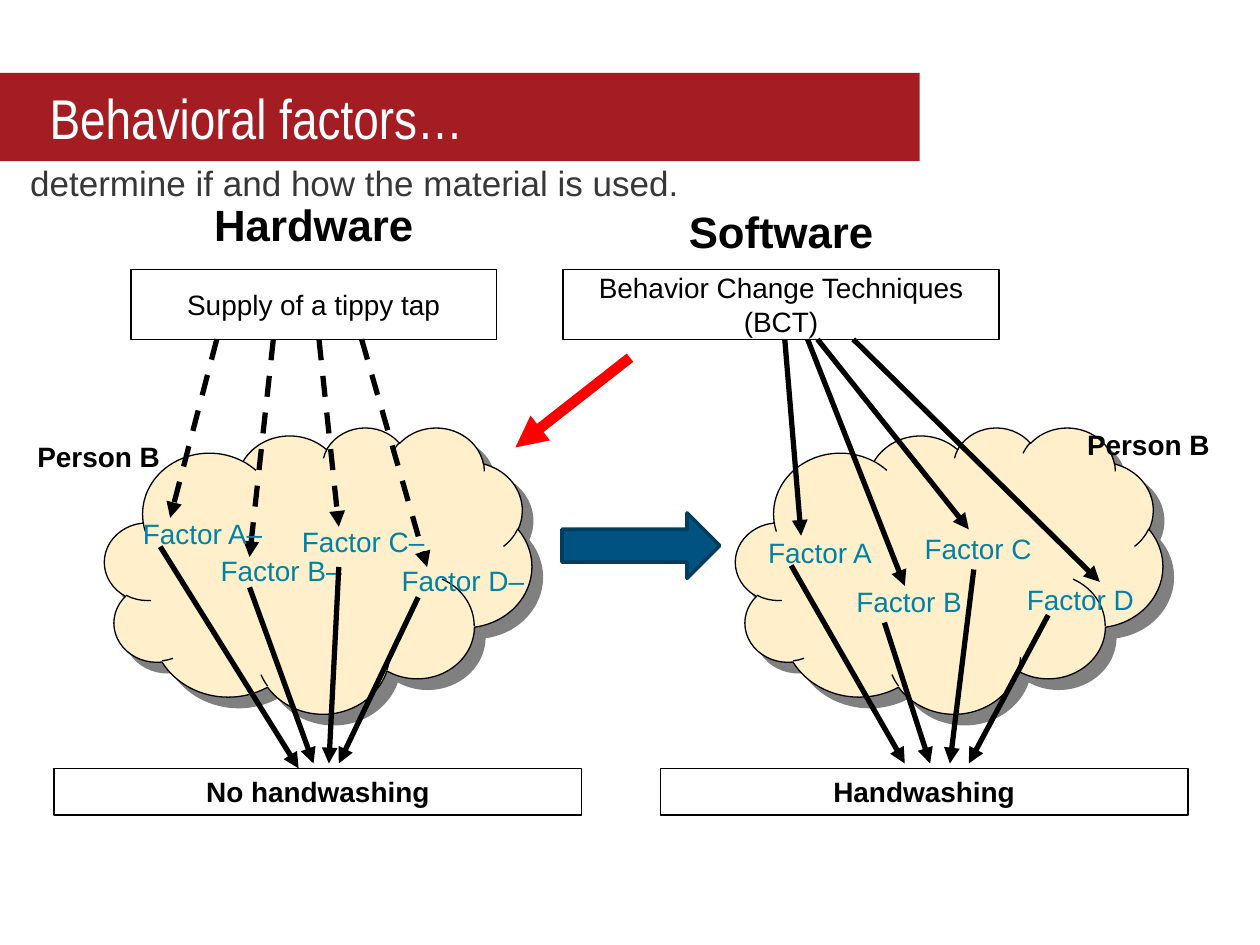
"""Build the slide on behavioral factors in handwashing."""
from lxml import etree
from pptx import Presentation
from pptx.dml.color import RGBColor
from pptx.enum.dml import MSO_LINE
from pptx.enum.shapes import MSO_CONNECTOR, MSO_SHAPE as SHAPE
from pptx.enum.text import MSO_ANCHOR as ANCHOR, MSO_AUTO_SIZE as AUTO, PP_ALIGN as ALIGN
from pptx.oxml.ns import qn
from pptx.util import Cm, Pt

BLACK, TEAL = "000000", "0082A6"
SOURCE_TOP, SOURCE_H = 5.44, 1.4
OUTCOME_TOP, OUTCOME_W, OUTCOME_H = 15.49, 10.64, 0.94
CLOUD_TOP, CLOUD_W, CLOUD_H = 8.61, 8.61, 5.77
LABEL_H, HEADING_H = 0.94, 1.32

SIDES = [
    {
        "heading": ("Hardware", 4.04, 3.86, 4.57),
        "source": ("Supply of a tippy tap", 2.64, 7.37),
        "outcome": ("No handwashing", 1.09),
        "person": ("Person B", 0.48, 8.74, 3.02),
        "cloud_left": 2.11,
        "dash": MSO_LINE.DASH,
        "factors": [("Factor A–", 2.59, 10.29, 2.95), ("Factor B–", 4.17, 11.02, 2.97),
                    ("Factor C–", 5.79, 10.44, 3.02), ("Factor D–", 7.8, 11.23, 3.02)],
        "inputs": [(4.37, 3.43, 10.44), (5.51, 5.03, 11.23),
                   (6.43, 6.83, 10.62), (7.29, 8.61, 11.43)],
        "effects": [(8.43, 12.04, 6.83, 15.39), (6.83, 11.43, 6.63, 15.39),
                    (5.03, 11.84, 6.32, 15.39), (3.23, 11.02, 6.02, 15.49)],
    },
    {
        "heading": ("Software", 13.61, 3.99, 4.27),
        "source": ("Behavior Change Techniques (BCT)", 11.35, 8.79),
        "outcome": ("Handwashing", 13.31),
        "person": ("Person B", 21.64, 8.48, 3.02),
        "cloud_left": 14.83,
        "dash": None,
        "factors": [("Factor A", 15.19, 10.67, 2.64), ("Factor B", 16.97, 11.66, 2.67),
                    ("Factor C", 18.36, 10.59, 2.69), ("Factor D", 20.42, 11.61, 2.69)],
        "inputs": [(15.82, 16.15, 10.8), (16.28, 18.24, 11.81),
                   (16.48, 19.53, 10.67), (17.2, 22.17, 11.73)],
        "effects": [(21.13, 12.4, 19.53, 15.39), (19.63, 11.48, 19.15, 15.39),
                    (17.83, 12.55, 18.75, 15.39), (15.95, 11.4, 18.24, 15.39)],
    },
]

prs = Presentation()
prs.slide_width, prs.slide_height = Cm(25.4), Cm(19.05)
s = prs.slides.add_slide(prs.slide_layouts[6])


def rgb(color):
    return RGBColor.from_string(color)


def write(sp, text, size=16, font="Arial", color=BLACK, bold=False, align=ALIGN.CENTER,
          anchor=ANCHOR.TOP, wrap=True, grow=False, insets=(0.25, 0.13, 0.25, 0.13)):
    tf = sp.text_frame
    tf.word_wrap, tf.vertical_anchor = wrap, anchor
    tf.auto_size = AUTO.SHAPE_TO_FIT_TEXT if grow else AUTO.NONE
    tf.margin_left, tf.margin_top, tf.margin_right, tf.margin_bottom = map(Cm, insets)
    p = tf.paragraphs[0]
    p.alignment = align
    r = p.add_run()
    r.text = text
    r.font.size, r.font.name, r.font.bold = Pt(size), font, bold
    r.font.color.rgb = rgb(color)


def add_shape(kind, box, fill=None, line=None, width=0.75):
    sp = s.shapes.add_shape(kind, *map(Cm, box))
    sp.shadow.inherit = False
    if fill:
        sp.fill.solid()
        sp.fill.fore_color.rgb = rgb(fill)
    else:
        sp.fill.background()
    if line:
        sp.line.color.rgb, sp.line.width = rgb(line), Pt(width)
    else:
        sp.line.fill.background()
    return sp


def add_text(text, box, **fmt):
    write(s.shapes.add_textbox(*map(Cm, box)), text, **fmt)


def add_label(text, left, top, width, height=LABEL_H, **fmt):
    add_text(text, (left, top, width, height), wrap=False, grow=True, **fmt)


def add_arrow(x1, y1, x2, y2, color=BLACK, width=3, dash=None):
    c = s.shapes.add_connector(MSO_CONNECTOR.STRAIGHT, *map(Cm, (x1, y1, x2, y2)))
    c.line.color.rgb, c.line.width = rgb(color), Pt(width)
    if dash:
        c.line.dash_style = dash
    sp_pr = c.element.spPr
    etree.SubElement(sp_pr.find(qn("a:ln")), qn("a:tailEnd"), type="triangle")
    etree.SubElement(sp_pr, qn("a:effectLst"))


def add_cloud(left):
    sp = add_shape(SHAPE.CLOUD, (left, CLOUD_TOP, CLOUD_W, CLOUD_H), "FFF0CB", BLACK)
    effects = sp.element.spPr.find(qn("a:effectLst"))
    shadow = etree.SubElement(effects, qn("a:outerShdw"), dist=str(Pt(8.5)),
                              dir="2700000", algn="ctr", rotWithShape="0")
    etree.SubElement(shadow, qn("a:srgbClr"), val="808080")


def add_side(side):
    text, left, width = side["source"]
    write(add_shape(SHAPE.RECTANGLE, (left, SOURCE_TOP, width, SOURCE_H), line=BLACK),
          text, anchor=ANCHOR.MIDDLE)
    text, left = side["outcome"]
    write(add_shape(SHAPE.RECTANGLE, (left, OUTCOME_TOP, OUTCOME_W, OUTCOME_H), line=BLACK),
          text, bold=True, grow=True)
    add_cloud(side["cloud_left"])
    for x1, x2, y2 in side["inputs"]:
        add_arrow(x1, SOURCE_TOP + SOURCE_H, x2, y2, dash=side["dash"])
    for factor in side["factors"]:
        add_label(*factor, color=TEAL, align=ALIGN.RIGHT)
    for effect in side["effects"]:
        add_arrow(*effect)
    add_label(*side["person"], bold=True)
    add_label(*side["heading"], height=HEADING_H, size=25, bold=True)


write(add_shape(SHAPE.RECTANGLE, (0, 1.47, 18.54, 1.78), "A31D23"), "Behavioral factors…",
      size=32, font="Arial Narrow", color="FFFFFF", align=ALIGN.LEFT,
      anchor=ANCHOR.MIDDLE, insets=(1, 0.13, 1, 0.13))
add_text("determine if and how the material is used.", (0.61, 3.12, 22.86, 1.19),
         size=20, color="373737", align=ALIGN.LEFT, insets=(0, 0.13, 0.25, 0.13))
for side in SIDES:
    add_side(side)
add_arrow(12.7, 7.21, 10.39, 9.02, color="FF0000", width=6)
add_shape(SHAPE.RIGHT_ARROW, (11.33, 10.34, 3.18, 1.32), "005380", "003D5F", 2)

prs.save("out.pptx")
